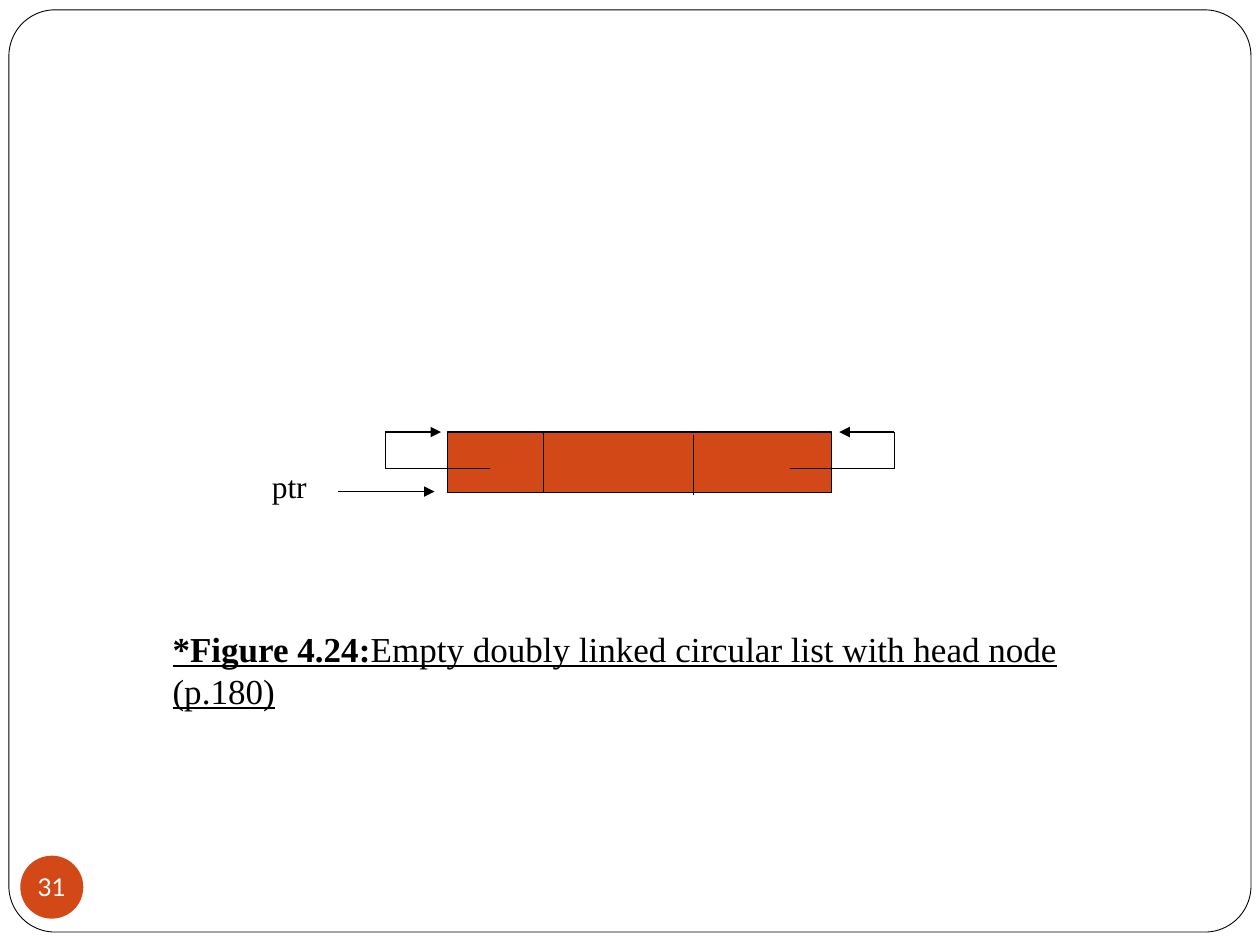
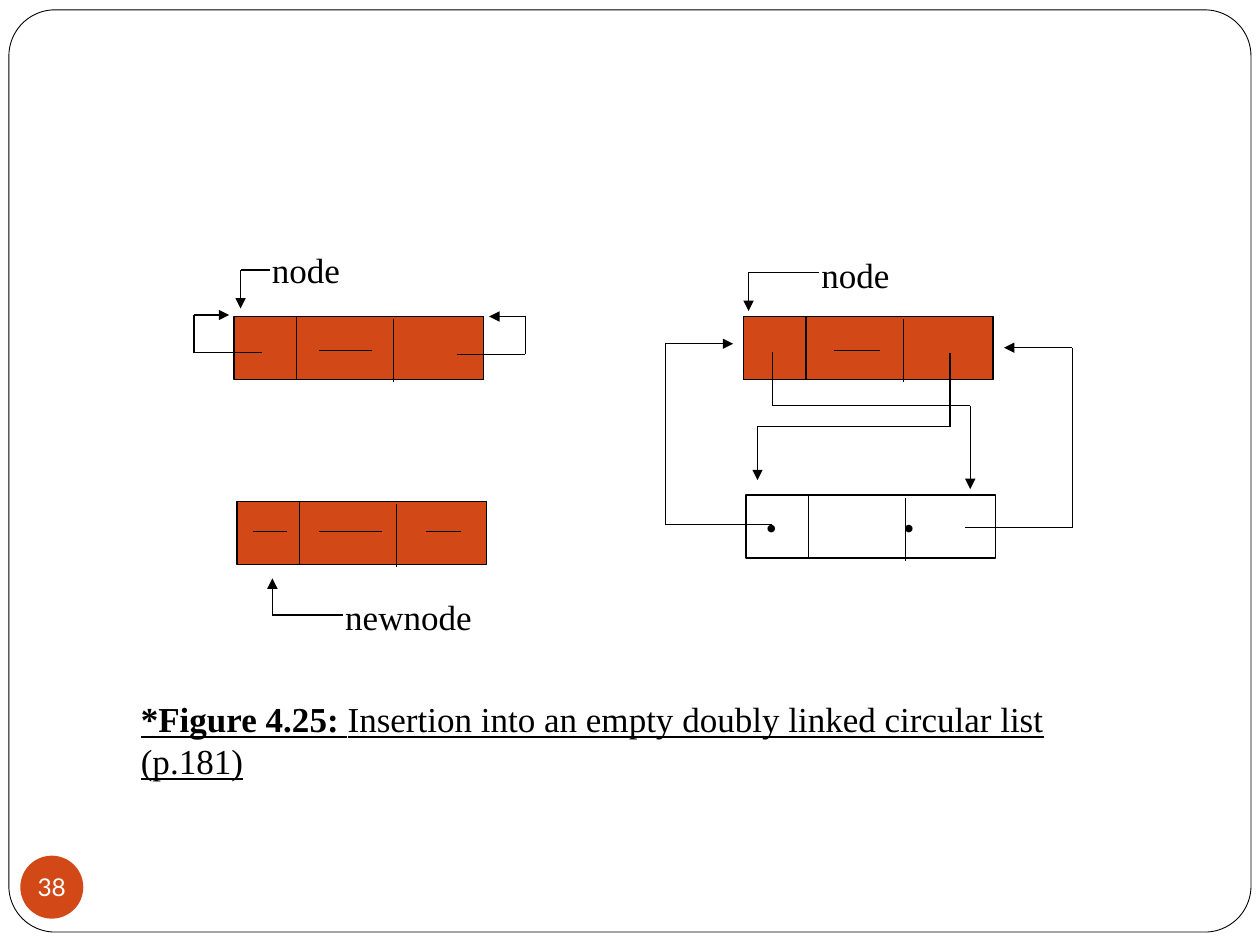
from lxml import etree
from pptx import Presentation
from pptx.dml.color import RGBColor
from pptx.enum.shapes import MSO_CONNECTOR, MSO_SHAPE
from pptx.enum.text import MSO_ANCHOR, PP_ALIGN
from pptx.oxml.ns import qn
from pptx.util import Cm, Pt

STRAIGHT = MSO_CONNECTOR.STRAIGHT
RECTANGLE = MSO_SHAPE.RECTANGLE
ROUNDED = MSO_SHAPE.ROUNDED_RECTANGLE
OVAL = MSO_SHAPE.OVAL
MIDDLE = MSO_ANCHOR.MIDDLE
LEFT, CENTER = PP_ALIGN.LEFT, PP_ALIGN.CENTER

ORANGE, BLACK, WHITE = "D34817", "000000", "FFFFFF"
SERIF, SANS = "Times New Roman", "Lato"
FIELD_DIVIDERS = (0.25, 0.64)  # shares of the node width
DIVIDER_DROP = 0.05
NODE_SIZE = (5.03, 1.27)


def rgb(hex_color):
    return RGBColor.from_string(hex_color)


def style_run(run, size, font=SERIF, color=BLACK):
    run.font.size = Pt(size)
    run.font.name = font
    run.font.color.rgb = rgb(color)


def add_box(slide, kind, left, top, width, height, fill=None, line_width=None):
    box = slide.shapes.add_shape(kind, Cm(left), Cm(top), Cm(width), Cm(height))
    box.shadow.inherit = False
    if fill:
        box.fill.solid()
        box.fill.fore_color.rgb = rgb(fill)
    else:
        box.fill.background()
    if line_width:
        box.line.color.rgb = rgb(BLACK)
        box.line.width = Pt(line_width)
    else:
        box.line.fill.background()
    return box


def add_link(slide, *points, arrow=True):
    """Join the points with straight lines; the last one may carry an arrowhead."""
    for start, end in zip(points, points[1:]):
        segment = slide.shapes.add_connector(STRAIGHT, *map(Cm, start + end))
        segment.line.color.rgb = rgb(BLACK)
        segment.line.width = Pt(0.75)
        properties = segment.element.spPr
        etree.SubElement(properties, qn("a:effectLst"))
    if arrow:
        outline = properties.find(qn("a:ln"))
        etree.SubElement(outline, qn("a:tailEnd"), type="triangle")


def add_loop(slide, start, outer_x, end):
    """Run sideways to outer_x, then back to the end point."""
    add_link(slide, start, (outer_x, start[1]), (outer_x, end[1]), end)


def add_dashes(slide, y, *spans):
    """Mark unused node fields with short lines."""
    for left, right in spans:
        add_link(slide, (left, y), (right, y), arrow=False)


def add_node(slide, left, top, width, height, fill=ORANGE):
    """Draw a list node with its left link, data and right link fields."""
    node = add_box(slide, RECTANGLE, left, top, width, height, fill, 0.75)
    for index, share in enumerate(FIELD_DIVIDERS):
        x, y = left + share * width, top + index * DIVIDER_DROP
        add_link(slide, (x, y), (x, y + height), arrow=False)
    return node


def add_link_dots(node):
    """Put a dot in each of the two link fields."""
    frame = node.text_frame
    frame.vertical_anchor = MIDDLE
    frame.margin_left = Cm(0.4)
    paragraph = frame.paragraphs[0]
    paragraph.text = "•\t•"
    paragraph.alignment = LEFT
    for run in paragraph.runs:
        style_run(run, 18)
    tabs = etree.SubElement(paragraph._p.get_or_add_pPr(), qn("a:tabLst"))
    etree.SubElement(tabs, qn("a:tab"), pos=str(Cm(2.77)), algn="l")


def add_label(slide, left, top, width, text, size=20):
    label = slide.shapes.add_textbox(Cm(left), Cm(top), Cm(width), Cm(1.09))
    label.text_frame.word_wrap = True
    paragraph = label.text_frame.paragraphs[0]
    paragraph.text = text
    style_run(paragraph.runs[0], size)
    return paragraph


def add_caption(slide, left, top, width, number, description):
    paragraph = add_label(slide, left, top, width, number)
    paragraph.add_run().text = description
    for run, bold in zip(paragraph.runs, (True, False)):
        style_run(run, 20)
        run.font.bold = bold
        run.font.underline = True


def add_figure_slide(deck, page):
    """Start a slide with the rounded frame and the page badge."""
    slide = deck.slides.add_slide(deck.slide_layouts[6])
    border = add_box(slide, ROUNDED, 0.18, 0.2, 25.04, 18.59, WHITE, 0.5)
    border.adjustments[0] = 0.05
    badge = add_box(slide, OVAL, 0.41, 17.25, 1.27, 1.27, ORANGE)
    frame = badge.text_frame
    frame.margin_left = frame.margin_right = 0
    frame.margin_top = frame.margin_bottom = 0
    frame.word_wrap = False
    frame.vertical_anchor = MIDDLE
    frame.text = str(page)
    frame.paragraphs[0].alignment = CENTER
    style_run(frame.paragraphs[0].runs[0], 14, SANS, WHITE)
    return slide


def build_empty_list(deck):
    slide = add_figure_slide(deck, 31)
    add_node(slide, 9.02, 8.71, 7.75, 1.22)
    add_loop(slide, (15.93, 9.45), 18.03, (16.92, 8.71))
    add_loop(slide, (9.88, 9.45), 7.77, (8.89, 8.71))
    add_link(slide, (6.81, 9.91), (8.76, 9.91))
    add_label(slide, 5.23, 9.3, 1.6, "ptr", 18)
    add_caption(slide, 3.23, 12.52, 20.3, "*Figure 4.24:",
                "Empty doubly linked circular list with head node (p.180)")


def draw_before_insertion(slide):
    add_node(slide, 4.72, 6.38, *NODE_SIZE)
    add_loop(slide, (9.22, 7.14), 10.59, (9.86, 6.38))
    add_loop(slide, (5.28, 7.11), 3.91, (4.62, 6.35))
    add_dashes(slide, 7.06, (6.43, 7.49))
    add_link(slide, (5.44, 5.44), (4.85, 5.44), (4.85, 6.22))
    add_label(slide, 5.23, 4.88, 2.2, "node")

    add_node(slide, 4.78, 10.11, *NODE_SIZE)
    add_dashes(slide, 10.72, (5.11, 5.79), (6.43, 7.7), (8.59, 9.3))
    add_link(slide, (6.91, 12.4), (5.49, 12.4), (5.49, 11.66))
    add_label(slide, 6.71, 11.89, 3.4, "newnode")


def draw_after_insertion(slide):
    add_node(slide, 14.99, 6.38, *NODE_SIZE)
    add_dashes(slide, 7.06, (16.81, 17.73))
    add_link(slide, (16.51, 5.49), (15.09, 5.49), (15.09, 6.27))
    add_label(slide, 16.31, 4.98, 2.2, "node")

    add_link_dots(add_node(slide, 15.04, 9.98, *NODE_SIZE, fill=None))
    add_link(slide, (15.57, 7.09), (15.57, 8.18), (19.56, 8.18), (19.56, 9.86))
    add_link(slide, (19.15, 7.11), (19.15, 8.6), (15.27, 8.6), (15.27, 9.68))
    add_loop(slide, (19.46, 10.64), 21.62, (20.24, 7.01))
    add_loop(slide, (15.57, 10.57), 13.41, (14.78, 6.93))


def build_insertion(deck):
    slide = add_figure_slide(deck, 38)
    draw_before_insertion(slide)
    draw_after_insertion(slide)
    add_caption(slide, 2.59, 13.94, 20.6, "*Figure 4.25: ",
                "Insertion into an empty doubly linked circular list (p.181)")


def main():
    deck = Presentation()
    deck.slide_width, deck.slide_height = Cm(25.4), Cm(19.05)
    build_empty_list(deck)
    build_insertion(deck)
    deck.save("out.pptx")


if __name__ == "__main__":
    main()
